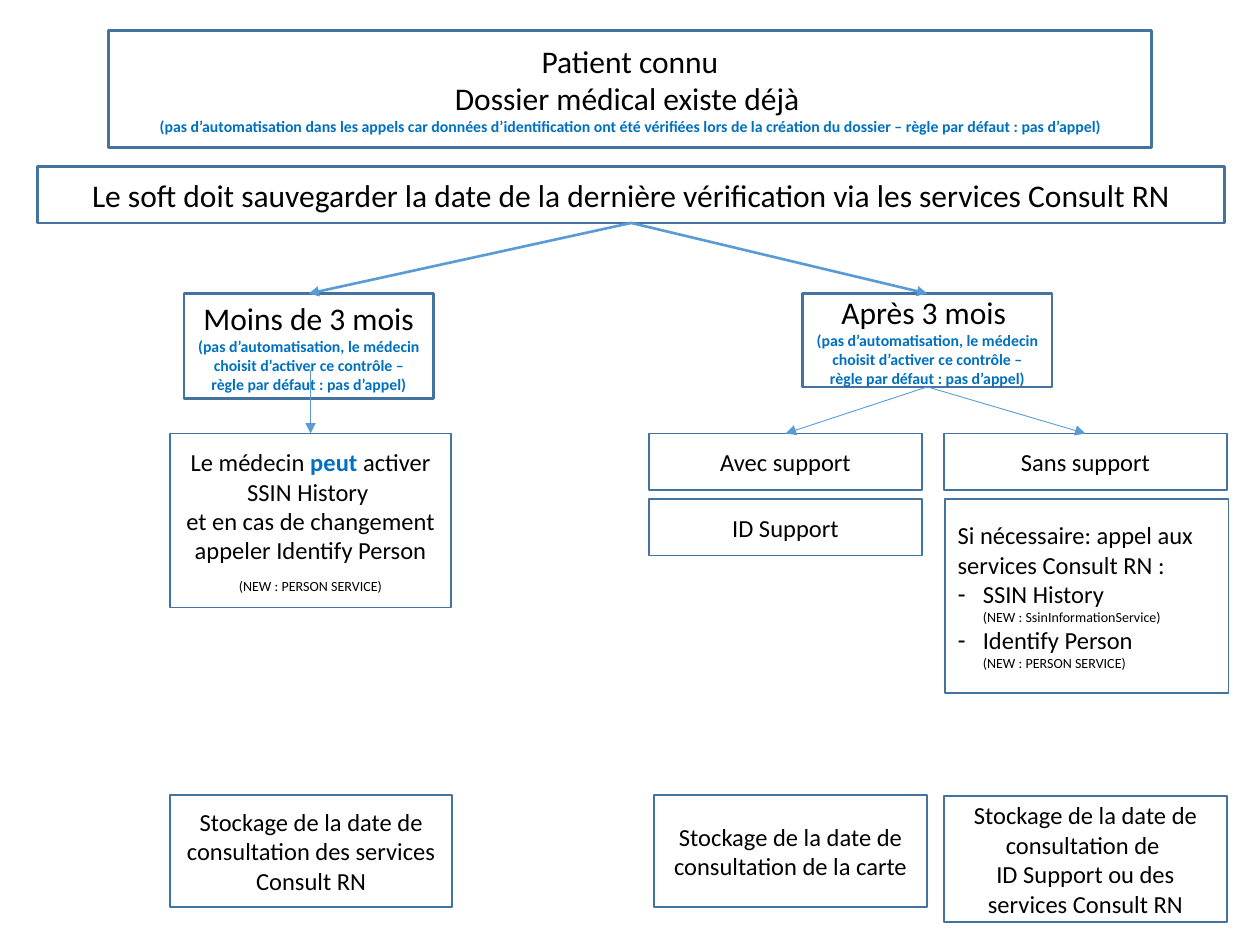
from dataclasses import dataclass

from lxml import etree
from pptx import Presentation
from pptx.dml.color import RGBColor
from pptx.enum import shapes, text
from pptx.oxml import ns
from pptx.util import Pt

BLACK = RGBColor(0x00, 0x00, 0x00)
ACCENT = RGBColor(0x00, 0x70, 0xC0)
BORDER = RGBColor(0x43, 0x73, 0x9E)
ARROW = RGBColor(0x5B, 0x9B, 0xD5)
FONT = "Calibri"
CENTER, LEFT = text.PP_ALIGN.CENTER, text.PP_ALIGN.LEFT
LIST_INDENT = 14.4


@dataclass
class Run:
    words: str
    size: float = 14
    color: RGBColor = BLACK
    bold: bool = False


@dataclass
class Para:
    runs: list[Run]
    align: text.PP_ALIGN = CENTER
    indent: float = 0
    bullet: str = ""
    space_before: float = 0


@dataclass
class Box:
    left: float
    top: float
    width: float
    height: float
    paras: list[Para]
    line: float = 1

    def top_center(self) -> tuple[float, float]:
        return self.left + self.width / 2, self.top

    def bottom_center(self) -> tuple[float, float]:
        return self.left + self.width / 2, self.top + self.height


def heading(words: str) -> Para:
    return Para([Run(words, 18)])


def plain(words: str) -> Para:
    return Para([Run(words)])


def remark(words: str) -> Run:
    return Run(words, 9, ACCENT, True)


def list_item(words: str) -> Para:
    return Para([Run(words)], LEFT, LIST_INDENT, "-")


def list_detail(words: str) -> Para:
    return Para([Run(words, 8)], LEFT, LIST_INDENT)


def write_para(para, content: Para) -> None:
    para.alignment = content.align
    para.space_before = Pt(content.space_before)
    para.space_after = Pt(0)
    props = para._p.get_or_add_pPr()
    props.set("marL", str(Pt(content.indent)))
    props.set("indent", str(-Pt(content.indent) if content.bullet else 0))
    if content.bullet:
        etree.SubElement(props, ns.qn("a:buChar"), char=content.bullet)
    else:
        etree.SubElement(props, ns.qn("a:buNone"))
    for run in content.runs:
        span = para.add_run()
        span.text = run.words
        span.font.name = FONT
        span.font.size = Pt(run.size)
        span.font.bold = run.bold
        span.font.color.rgb = run.color


def fill_box(shape, box: Box) -> None:
    shape.left, shape.top = Pt(box.left), Pt(box.top)
    shape.width, shape.height = Pt(box.width), Pt(box.height)
    shape.fill.background()
    shape.line.color.rgb = BORDER
    shape.line.width = Pt(box.line)
    frame = shape.text_frame
    frame.word_wrap = True
    frame.auto_size = text.MSO_AUTO_SIZE.NONE
    frame.vertical_anchor = text.MSO_ANCHOR.MIDDLE
    for number, content in enumerate(box.paras):
        write_para(frame.add_paragraph() if number else frame.paragraphs[0], content)


def draw_box(page, box: Box) -> None:
    shape = page.shapes.add_shape(shapes.MSO_SHAPE.RECTANGLE, 0, 0, 0, 0)
    shape.shadow.inherit = False
    fill_box(shape, box)


def draw_arrow(page, start: tuple[float, float], end: tuple[float, float], width: float) -> None:
    arrow = page.shapes.add_connector(
        shapes.MSO_CONNECTOR.STRAIGHT, *(Pt(value) for value in start + end))
    arrow.line.color.rgb = ARROW
    arrow.line.width = Pt(width)
    etree.SubElement(arrow.line._get_or_add_ln(), ns.qn("a:tailEnd"), type="triangle")
    etree.SubElement(arrow._element.spPr, ns.qn("a:effectLst"))


# Rows and shared sizes of the decision tree
BRANCH_TOP, CHOICE_TOP, ACTION_TOP, STORAGE_TOP = 167.8, 247.7, 285.1, 454.3
BAR_HEIGHT, BRANCH_WIDTH, CARD_WIDTH, NO_CARD_WIDTH = 32.4, 142.6, 156.2, 162
RULE = "(pas d’automatisation, le médecin choisit d’activer ce contrôle – règle par défaut : pas d’appel)"

patient = Box(62, 17.3, 596, 67, [
    heading("Patient connu"),
    Para([Run("Dossier médical existe déjà", 18), Run(" ")]),
    Para([remark("(pas d’automatisation dans les appels car données d’identification ont été "
                 "vérifiées lors de la création du dossier – règle par défaut : pas d’appel)")]),
], 1.5)
save_date = Box(21.6, 95, 678.2, BAR_HEIGHT, [heading(
    "Le soft doit sauvegarder la date de la dernière vérification via les services Consult RN")], 1.5)

# Branches by age of the last check
recent = Box(105.1, BRANCH_TOP, BRANCH_WIDTH, 59.8,
             [Para([Run("Moins de 3 mois ", 18), remark(RULE)])], 1.5)
older = Box(458.6, BRANCH_TOP, BRANCH_WIDTH, 53.3,
            [heading("Après 3 mois "), Para([remark(RULE)])], 1.5)

# Choices and actions
doctor = Box(97.2, CHOICE_TOP, 160.6, 99.4, [
    Para([Run("Le médecin"), Run(" peut ", color=ACCENT, bold=True), Run("activer SSIN History ")]),
    plain("et en cas de changement"),
    plain("appeler Identify Person"),
    Para([Run("(NEW : PERSON SERVICE)", 8)], space_before=7),
])
with_card = Box(370.8, CHOICE_TOP, CARD_WIDTH, BAR_HEIGHT, [plain("Avec support")])
without_card = Box(539.3, CHOICE_TOP, NO_CARD_WIDTH, BAR_HEIGHT, [plain("Sans support")])
card_id = Box(370.8, ACTION_TOP, CARD_WIDTH, BAR_HEIGHT, [plain("ID Support")])
services = Box(540, ACTION_TOP, NO_CARD_WIDTH, 110.9, [
    Para([Run("Si nécessaire: appel aux services Consult RN :")], LEFT),
    list_item("SSIN History"),
    list_detail("(NEW : SsinInformationService)"),
    list_item("Identify Person"),
    list_detail("(NEW : PERSON SERVICE)"),
])

# Dates to store
storage = [
    Box(97.2, STORAGE_TOP, 161.3, 64.1,
        [plain("Stockage de la date de consultation des services Consult RN")]),
    Box(373.7, STORAGE_TOP, CARD_WIDTH, 64.1,
        [plain("Stockage de la date de consultation de la carte")]),
    Box(539.3, 455, NO_CARD_WIDTH, 72,
        [plain("Stockage de la date de consultation de "),
         plain("ID Support ou des services Consult RN")]),
]


def main() -> None:
    deck = Presentation()
    deck.slide_width, deck.slide_height = Pt(720), Pt(540)
    page = deck.slides.add_slide(deck.slide_layouts[1])

    # Title and list placeholders
    fill_box(page.shapes.title, patient)
    fill_box(page.placeholders[1], services)

    for box in [recent, older, with_card, without_card, card_id, doctor, *storage, save_date]:
        draw_box(page, box)

    # Arrows between the levels
    for branch in (recent, older):
        draw_arrow(page, save_date.bottom_center(), branch.top_center(), 1.5)
    doctor_x, doctor_y = doctor.top_center()
    draw_arrow(page, (doctor_x, doctor_y - 36), (doctor_x, doctor_y), 0.5)
    for choice in (with_card, without_card):
        draw_arrow(page, older.bottom_center(), choice.top_center(), 0.5)

    deck.save("out.pptx")


if __name__ == "__main__":
    main()
